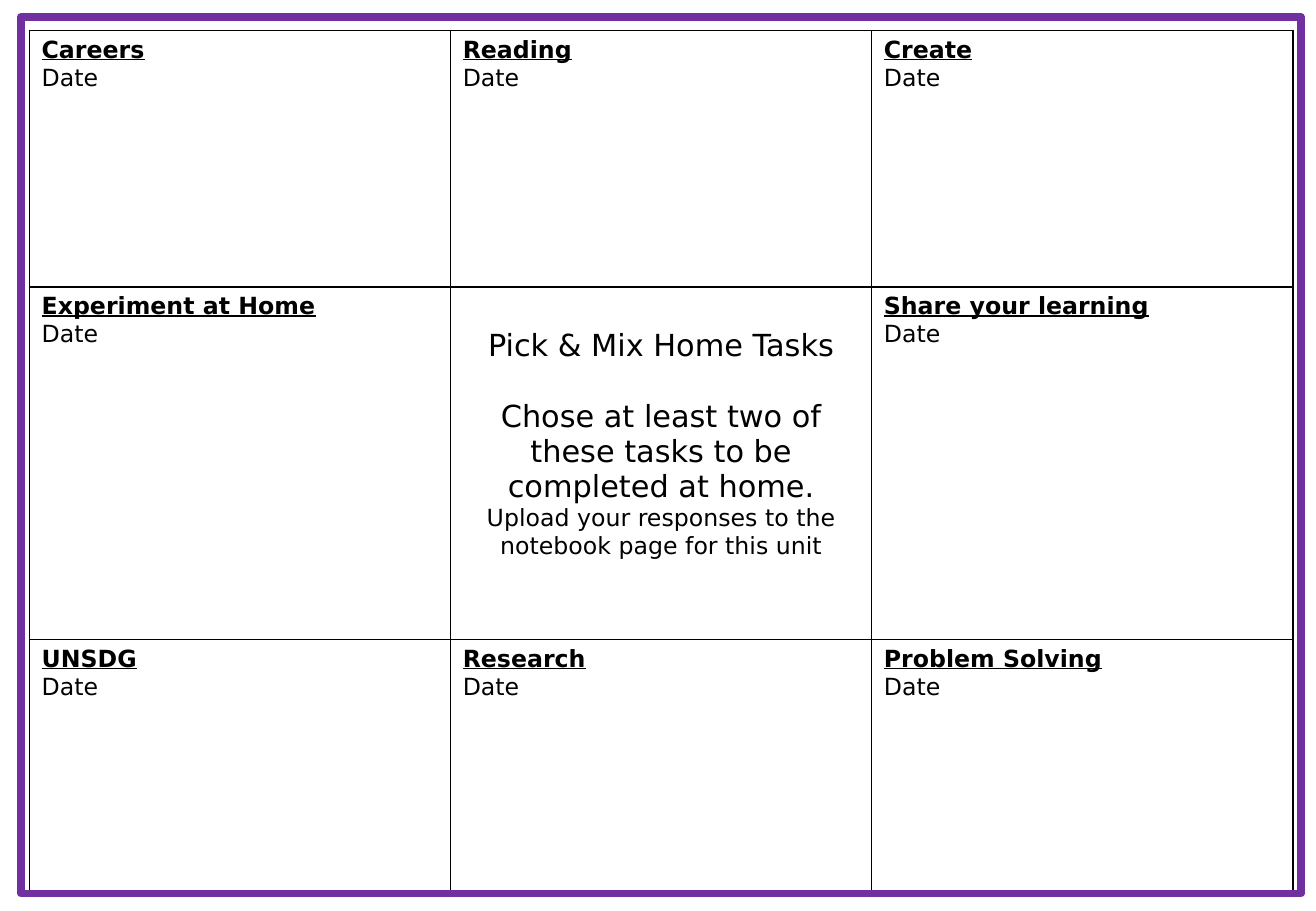
from lxml import etree
from pptx import Presentation
from pptx.dml.color import RGBColor
from pptx.enum.shapes import MSO_SHAPE as Shape
from pptx.enum.text import PP_ALIGN as Align
from pptx.oxml.ns import qn
from pptx.util import Pt

# Content: None marks the centre cell
TASKS = [
    ["Careers", "Reading", "Create"],
    ["Experiment at Home", None, "Share your learning"],
    ["UNSDG", "Research", "Problem Solving"],
]
DATE = "Date"
# Instruction text, size, space before
INSTRUCTIONS = [
    ("Pick & Mix Home Tasks", 18, 0),
    ("Chose at least two of these tasks to be completed at home.", 18, 21),
    ("Upload your responses to the notebook page for this unit", 14, 0),
]

# Layout and format, in points
SLIDE_SIZE = (780, 540)
GRID_LEFT, GRID_TOP = 17.5, 18
COLUMN_WIDTH = 249.6
ROW_HEIGHTS = [152, 209, 152]
FRAME = (12.4, 10.1, 758.9, 519.6)
FRAME_WIDTH = 4.5
BORDER_WIDTH = 1
INSTRUCTIONS_TOP = 24.6
BLACK, PURPLE = "000000", "7030A0"
BODY = {"name": "DejaVu Sans", "size": Pt(14), "bold": False, "underline": False}
HEADING = {**BODY, "bold": True, "underline": True}


def color(hex_text):
    return RGBColor.from_string(hex_text)


def write(paragraph, text, style):
    run = paragraph.add_run()
    run.text = text
    for key, value in style.items():
        setattr(run.font, key, value)
    run.font.color.rgb = color(BLACK)


def add_borders(cell):
    properties = cell._tc.get_or_add_tcPr()
    for side in ("a:lnL", "a:lnR", "a:lnT", "a:lnB"):
        line = etree.SubElement(properties, qn(side), w=str(Pt(BORDER_WIDTH)))
        fill = etree.SubElement(line, qn("a:solidFill"))
        etree.SubElement(fill, qn("a:srgbClr"), val=BLACK)


def write_task(cell, task):
    text = cell.text_frame
    write(text.paragraphs[0], task, HEADING)
    write(text.add_paragraph(), DATE, BODY)


def write_instructions(cell):
    cell.margin_top = Pt(INSTRUCTIONS_TOP)
    text = cell.text_frame
    for index, (instruction, size, gap) in enumerate(INSTRUCTIONS):
        paragraph = text.add_paragraph() if index else text.paragraphs[0]
        paragraph.alignment = Align.CENTER
        if gap:
            paragraph.space_before = Pt(gap)
        write(paragraph, instruction, {**BODY, "size": Pt(size)})


def add_grid(slide):
    columns = len(TASKS[0])
    grid = slide.shapes.add_table(
        len(TASKS), columns, Pt(GRID_LEFT), Pt(GRID_TOP),
        Pt(COLUMN_WIDTH * columns), Pt(sum(ROW_HEIGHTS))).table
    grid.first_row = grid.horz_banding = False
    for column in grid.columns:
        column.width = Pt(COLUMN_WIDTH)
    for row, height, tasks in zip(grid.rows, ROW_HEIGHTS, TASKS):
        row.height = Pt(height)
        for cell, task in zip(row.cells, tasks):
            add_borders(cell)
            cell.fill.background()
            if task:
                write_task(cell, task)
            else:
                write_instructions(cell)


def add_frame(slide):
    frame = slide.shapes.add_shape(Shape.RECTANGLE, *map(Pt, FRAME))
    frame.shadow.inherit = False
    frame.fill.background()
    frame.line.color.rgb = color(PURPLE)
    frame.line.width = Pt(FRAME_WIDTH)


def main():
    deck = Presentation()
    deck.slide_width, deck.slide_height = map(Pt, SLIDE_SIZE)
    slide = deck.slides.add_slide(deck.slide_layouts[6])
    add_grid(slide)
    add_frame(slide)
    deck.save("out.pptx")


if __name__ == "__main__":
    main()
